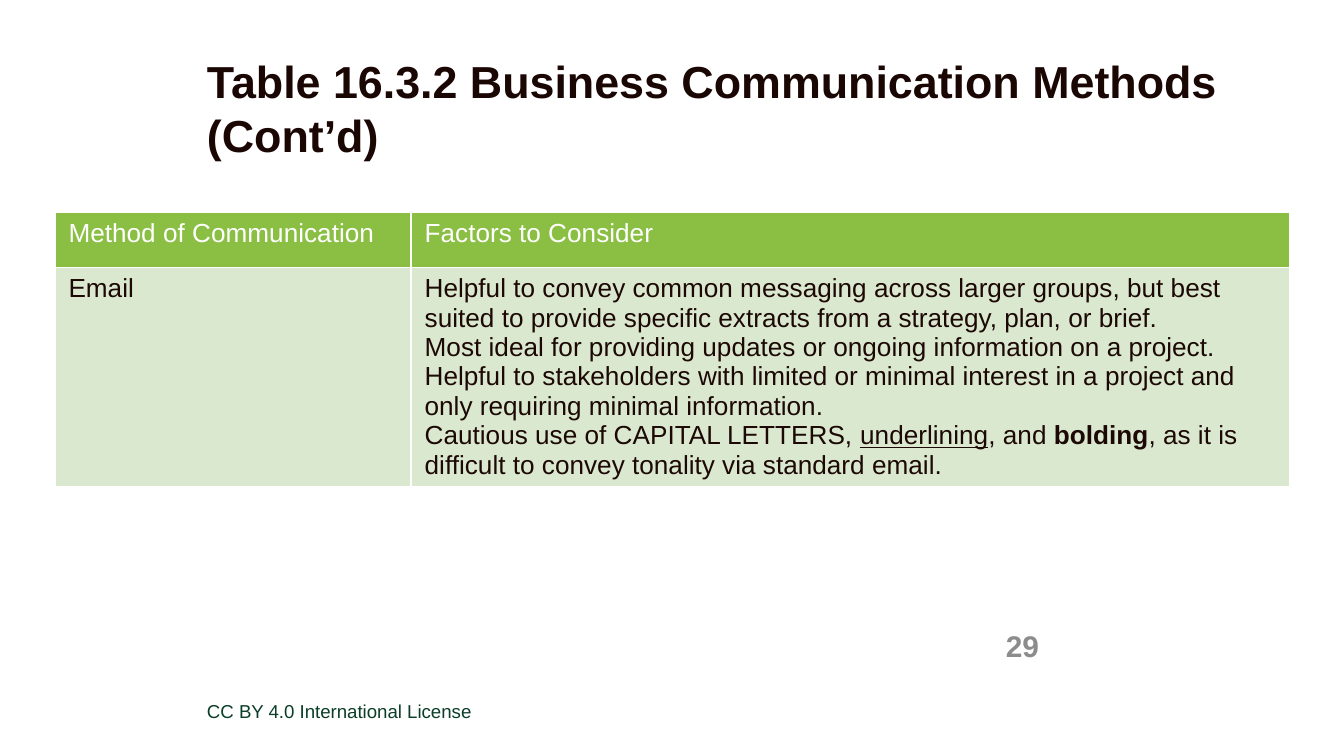
import pptx
import pptx.dml.color
import pptx.enum.text
import pptx.util
from pptx.enum.text import MSO_ANCHOR, PP_ALIGN
from pptx.util import Inches

TITLE = "Table 16.3.2 Business Communication Methods (Cont’d)"
LICENSE = "CC BY 4.0 International License"
PAGE_NUMBER = "29"
ROWS = [
    [[[("Method of Communication", "")]], [[("Factors to Consider", "")]]],
    [
        [[("Email", "")]],
        [
            [("Helpful to convey common messaging across larger groups, but best "
              "suited to provide specific extracts from a strategy, plan, or brief.", "")],
            [("Most ideal for providing updates or ongoing information on a project.", "")],
            [("Helpful to stakeholders with limited or minimal interest in a project "
              "and only requiring minimal information.", "")],
            [("Cautious use of CAPITAL LETTERS, ", ""), ("underlining", "u"),
             (", and ", ""), ("bolding", "b"),
             (", as it is difficult to convey tonality via standard email.", "")],
        ],
    ],
]
COLUMN_WIDTHS = [2.65, 6.54]
ROW_HEIGHTS = [0.41, 1.63]

THEME = {
    "font": "Arial",
    "title": (24, "1A0704", True),
    "license": (10, "0A3E28", False),
    "number": (16, "8D8C8C", True),
    "header": (14, "FFFFFF", False),
    "body": (14, "1C0804", False),
    "header_fill": "8ABF43",
    "body_fill": "DAE8CF",
}


def rgb(name):
    return pptx.dml.color.RGBColor.from_string(name)


def style(font, role):
    size, color, bold = THEME[role]
    font.name = THEME["font"]
    font.size = pptx.util.Pt(size)
    font.color.rgb = rgb(color)
    font.bold = bold


def write(sp, text, role, anchor=MSO_ANCHOR.TOP, align=PP_ALIGN.LEFT):
    tf = sp.text_frame
    tf.word_wrap = True
    tf.auto_size = pptx.enum.text.MSO_AUTO_SIZE.NONE
    tf.margin_left = tf.margin_top = tf.margin_right = tf.margin_bottom = 0
    tf.vertical_anchor = anchor
    p = tf.paragraphs[0]
    p.text = text
    p.alignment = align
    style(p.font, role)
    return p


def fill_cell(cell, paragraphs, role):
    tf = cell.text_frame
    for i, runs in enumerate(paragraphs):
        p = tf.add_paragraph() if i else tf.paragraphs[0]
        for text, mark in runs:
            r = p.add_run()
            r.text = text
            style(r.font, role)
            if mark == "u":
                r.font.underline = True
            elif mark == "b":
                r.font.bold = True
    cell.fill.solid()
    cell.fill.fore_color.rgb = rgb(THEME[role + "_fill"])


def main():
    prs = pptx.Presentation()
    prs.slide_width = Inches(10)
    prs.slide_height = prs.slide_width * 9 // 16
    s = prs.slides.add_slide(prs.slide_layouts[5])

    title = s.shapes.title
    title.left, title.top = Inches(1.54), Inches(0.4)
    title.width, title.height = Inches(7.96), Inches(0.4)
    write(title, TITLE, "title").line_spacing = pptx.util.Pt(28.8)

    box = s.shapes.add_textbox(Inches(1.54), Inches(5.21), Inches(5.99), Inches(0.15))
    write(box, LICENSE, "license")
    box = s.shapes.add_textbox(Inches(7.11), Inches(4.63), Inches(0.62), Inches(0.3))
    write(box, PAGE_NUMBER, "number", MSO_ANCHOR.MIDDLE, PP_ALIGN.RIGHT)
    box.text_frame.margin_top = Inches(0.05)

    table = s.shapes.add_table(
        len(ROWS), len(COLUMN_WIDTHS), Inches(0.41), Inches(1.58),
        Inches(sum(COLUMN_WIDTHS)), Inches(sum(ROW_HEIGHTS))).table
    for column, width in zip(table.columns, COLUMN_WIDTHS):
        column.width = Inches(width)
    for i, (row, height) in enumerate(zip(ROWS, ROW_HEIGHTS)):
        table.rows[i].height = Inches(height)
        for j, paragraphs in enumerate(row):
            fill_cell(table.cell(i, j), paragraphs, "body" if i else "header")

    prs.save("out.pptx")


if __name__ == "__main__":
    main()
